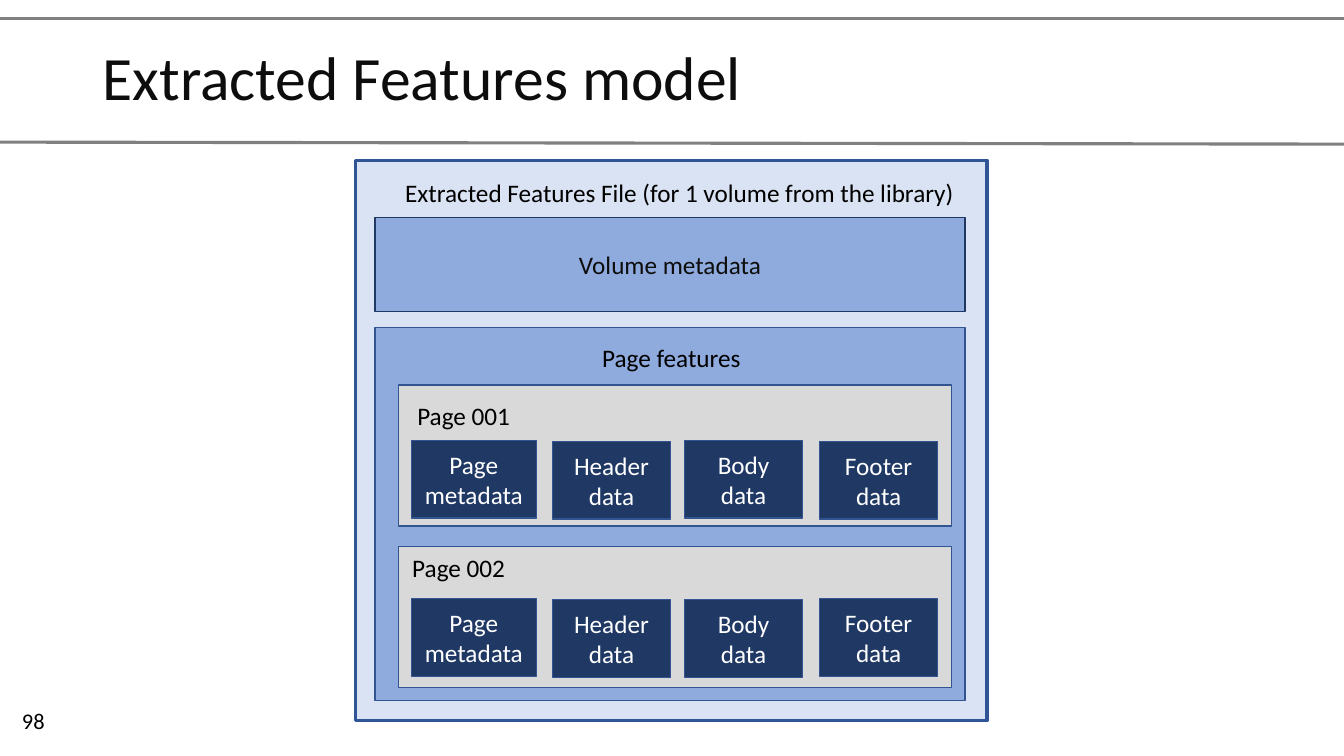
"""Build the slide on the Extracted Features model."""
from lxml import etree
from pptx import Presentation
from pptx.dml.color import RGBColor
from pptx.enum.shapes import MSO_CONNECTOR, MSO_SHAPE
from pptx.enum.text import MSO_ANCHOR, PP_ALIGN
from pptx.oxml.ns import qn
from pptx.util import Inches, Pt

LEFT, MID, RIGHT = PP_ALIGN.LEFT, PP_ALIGN.CENTER, PP_ALIGN.RIGHT
TOP, CENTER = MSO_ANCHOR.TOP, MSO_ANCHOR.MIDDLE
RECT, LINE = MSO_SHAPE.RECTANGLE, MSO_CONNECTOR.STRAIGHT

BLACK = RGBColor(0x00, 0x00, 0x00)
INK = RGBColor(0x0D, 0x0D, 0x0D)
WHITE = RGBColor(0xFF, 0xFF, 0xFF)
RULE = RGBColor(0x80, 0x80, 0x80)
PALE = RGBColor(0xDA, 0xE3, 0xF3)
BLUE = RGBColor(0x8F, 0xAA, 0xDC)
GREY = RGBColor(0xD9, 0xD9, 0xD9)
NAVY = RGBColor(0x20, 0x38, 0x64)
EDGE = RGBColor(0x32, 0x54, 0x91)
FRAME = RGBColor(0x2F, 0x55, 0x97)

TITLE = "Extracted Features model"
NUMBER = "98"
FILE = "Extracted Features File (for 1 volume from the library)"
VOLUME = "Volume metadata"
PAGES = "Page features"
RULES = [(0.18, 0.18), (1.41, 1.43)]
PARTS = [
    ("Page metadata", 4.08, 1.24),
    ("Header data", 5.48, 1.17),
    ("Body data", 6.79, 1.17),
    ("Footer data", 8.13, 1.17),
]
SHEETS = [
    {"name": "Page 001", "top": 3.82, "label": (4.04, 3.92),
     "rows": (4.37, 4.38, 4.37, 4.38)},
    {"name": "Page 002", "top": 5.42, "label": (3.99, 5.43),
     "rows": (5.94, 5.95, 5.95, 5.94)},
]


def write(shape, text, size=18, color=BLACK, align=LEFT, anchor=TOP, space=1.0):
    frame = shape.text_frame
    frame.word_wrap = True
    frame.vertical_anchor = anchor
    para = frame.paragraphs[0]
    para.alignment = align
    para.line_spacing = space
    run = para.add_run()
    run.text = text
    run.font.name = "Calibri"
    run.font.size = Pt(size)
    run.font.color.rgb = color


def label(slide, box, text, **style):
    write(slide.shapes.add_textbox(*map(Inches, box)), text, **style)


def panel(slide, box, fill, edge=EDGE, width=1):
    shape = slide.shapes.add_shape(RECT, *map(Inches, box))
    shape.shadow.inherit = False
    shape.fill.solid()
    shape.fill.fore_color.rgb = fill
    shape.line.color.rgb = edge
    shape.line.width = Pt(width)
    return shape


def rule(slide, start, end):
    line = slide.shapes.add_connector(
        LINE, 0, Inches(start), Inches(13.33), Inches(end))
    line.line.color.rgb = RULE
    line.line.width = Pt(2.25)
    etree.SubElement(line.element.spPr, qn("a:effectLst"))


def main():
    deck = Presentation()
    deck.slide_width, deck.slide_height = Inches(13.33), Inches(7.5)
    slide = deck.slides.add_slide(deck.slide_layouts[6])

    for start, end in RULES:
        rule(slide, start, end)
    label(slide, (0.92, 0.18, 11.5, 1.24), TITLE, size=44, color=INK,
          anchor=CENTER, space=0.9)

    panel(slide, (3.53, 1.59, 6.26, 5.56), PALE, FRAME, 2.25)
    label(slide, (3.53, 1.71, 6.03, 0.4), FILE, align=RIGHT)
    volume = panel(slide, (3.72, 2.16, 5.85, 0.93), BLUE, NAVY)
    write(volume, VOLUME, color=INK, align=MID, anchor=CENTER)
    panel(slide, (3.72, 3.25, 5.85, 3.7), BLUE)
    label(slide, (4.91, 3.35, 3.5, 0.4), PAGES, align=MID)

    for sheet in SHEETS:
        panel(slide, (3.95, sheet["top"], 5.49, 1.4), GREY)
        label(slide, (*sheet["label"], 1.81, 0.4), sheet["name"])
        for (text, left, width), top in zip(PARTS, sheet["rows"]):
            part = panel(slide, (left, top, width, 0.77), NAVY)
            write(part, text, color=WHITE, align=MID, anchor=CENTER)

    label(slide, (0.12, 6.95, 3, 0.4), NUMBER, size=16, anchor=CENTER)
    deck.save("out.pptx")


if __name__ == "__main__":
    main()
